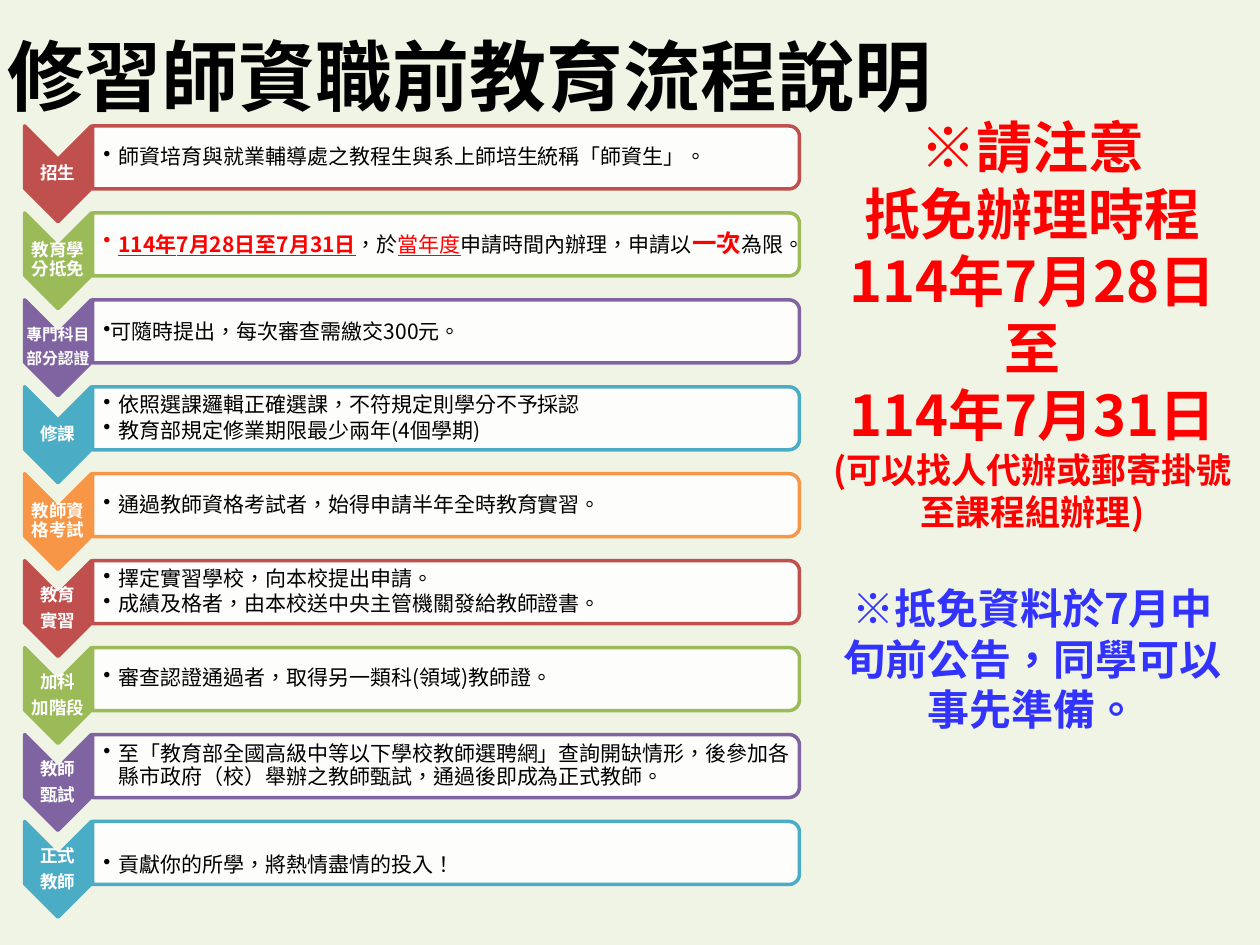
from lxml.etree import SubElement
from pptx import Presentation
from pptx.dml.color import RGBColor
from pptx.enum.lang import MSO_LANGUAGE_ID as Language
from pptx.enum.shapes import MSO_SHAPE as Shape
from pptx.enum.text import MSO_ANCHOR as Anchor, PP_ALIGN as Align
from pptx.oxml.ns import qn
from pptx.util import Inches, Pt

COLORS = {
    "background": "EFF4E5", "black": "000000", "white": "FFFFFF",
    "alert": "FF0000", "note": "3333FF", "red": "C0504D", "green": "9BBB59",
    "purple": "8064A2", "teal": "4BACC6", "orange": "F79646",
}
FONT, STOP_FONT = "Noto Sans CJK SC", "Noto Sans CJK TC"

# Content: a paragraph is a string or a list of (text, format) runs
TITLE = "修習師資職前教育流程說明"
STOP = ("。", {"font": STOP_FONT})
DATE = {"color": "alert", "bold": True, "underline": True}
TERM = {"color": "alert", "underline": True}
ONCE = {"color": "alert", "bold": True, "size": 14}

# Each step: color, label lines, bullet paragraphs, format changes
STEPS = [
    ("red", ["招生"],
     [[("師資培育與就業輔導處之教程生與系上師培生統稱「師資生」", {}), STOP]], {}),
    ("green", ["教育學分抵免"],
     [[("114年7月28日至7月31日", DATE), ("，於", {}), ("當年度", TERM),
       ("申請時間內辦理，申請以", {}), ("一次", ONCE), ("為限", {}), STOP]], {}),
    ("purple", ["專門科目", "部分認證"],
     [[("可隨時提出，每次審查需繳交300元", {}), STOP]],
     {"label_size": 9, "indent": 0, "line_spacing": 1, "space_after": 0}),
    ("teal", ["修課"],
     ["依照選課邏輯正確選課，不符規定則學分不予採認",
      "教育部規定修業期限最少兩年(4個學期)"], {}),
    ("orange", ["教師資格考試"],
     ["通過教師資格考試者，始得申請半年全時教育實習。"], {}),
    ("red", ["教育", "實習"],
     [[("擇定實習學校，向本校提出申請", {}), STOP],
      "成績及格者，由本校送中央主管機關發給教師證書。"], {}),
    ("green", ["加科", "加階段"],
     [[("審查認證通過者，取得另一類科(領域)教師證", {}), STOP]], {}),
    ("purple", ["教師", "甄試"],
     ["至「教育部全國高級中等以下學校教師選聘網」查詢開缺情形，"
      "後參加各縣市政府（校）舉辦之教師甄試，通過後即成為正式教師。"], {}),
    ("teal", ["正式", "教師"], ["貢獻你的所學，將熱情盡情的投入！"], {"drop": 0.1}),
]
NOTICE = ["※請注意", "抵免辦理時程", "114年7月28日", "至", "114年7月31日",
          [("(可以找人代辦或郵寄掛號至課程組辦理)", {"size": 20})],
          [("※抵免資料於7月中旬前公告，同學可以事先準備。",
            {"size": 24, "color": "note"})]]

# Layout
FIRST_CENTER, LAST_CENTER = 1.25, 6.77
STEP_GAP = (LAST_CENTER - FIRST_CENTER) / (len(STEPS) - 1)
CHEVRON_DROP = 0.13
CHEVRON_CENTER, BAR_CENTER, BULLETS_CENTER = 0.46, 3.54, 3.52


def color(name):
    return RGBColor.from_string(COLORS[name])


def add_text(slide, box, paragraphs, size, font_color="black", bold=False,
             align=Align.LEFT, anchor=Anchor.MIDDLE, insets=None, indent=None,
             line_spacing=1, space_after=0):
    """Add a text box; an indent in inches makes the paragraphs bulleted."""
    frame = slide.shapes.add_textbox(*map(Inches, box)).text_frame
    frame.word_wrap = True
    frame.vertical_anchor = anchor
    if insets:
        (frame.margin_left, frame.margin_top,
         frame.margin_right, frame.margin_bottom) = map(Inches, insets)
    for index, content in enumerate(paragraphs):
        paragraph = frame.add_paragraph() if index else frame.paragraphs[0]
        paragraph.alignment = align
        paragraph.line_spacing = line_spacing
        paragraph.space_after = Pt(space_after)
        if indent is not None:
            properties = paragraph._p.get_or_add_pPr()
            properties.set("marL", str(Inches(indent)))
            properties.set("indent", str(-Inches(indent)))
            SubElement(properties, qn("a:buChar"), char="•")
        runs = [(content, {})] if isinstance(content, str) else content
        for text, style in runs:
            run = paragraph.add_run()
            run.text = text
            font = run.font
            font.name = style.get("font", FONT)
            font.size = Pt(style.get("size", size))
            font.bold = style.get("bold", bold)
            font.underline = style.get("underline", False)
            font.color.rgb = color(style.get("color", font_color))
            font.language_id = Language.TRADITIONAL_CHINESE
            SubElement(run._r.get_or_add_rPr(), qn("a:ea"), typeface=font.name)
    return frame


def centered(x, y, width, height):
    return x - width / 2, y - height / 2, width, height


def add_turned_shape(slide, kind, box, fill, line, opacity=None):
    shape = slide.shapes.add_shape(kind, *map(Inches, box))
    shape.rotation = 90
    shape.shadow.inherit = False
    shape.fill.solid()
    shape.fill.fore_color.rgb = color(fill)
    shape.line.color.rgb = color(line)
    shape.line.width = Pt(2)
    if opacity:
        fill_color = shape._element.spPr.find(qn("a:solidFill"))[0]
        SubElement(fill_color, qn("a:alpha"), val=str(opacity * 1000))


def add_step(slide, center, step_color, label, bullets, changes):
    label_center = center + CHEVRON_DROP
    add_turned_shape(slide, Shape.CHEVRON,
                     centered(CHEVRON_CENTER, label_center, 0.76, 0.53),
                     step_color, step_color)
    add_text(slide, centered(CHEVRON_CENTER, label_center, 0.53, 0.23), label,
             changes.get("label_size", 10), font_color="white", bold=True,
             align=Align.CENTER, insets=[0.01] * 4, line_spacing=0.9,
             space_after=4)
    add_turned_shape(slide, Shape.ROUND_2_SAME_RECTANGLE,
                     centered(BAR_CENTER, center, 0.5, 5.61),
                     "white", step_color, opacity=90)
    bullets_center = center + changes.get("drop", 0)
    add_text(slide, centered(BULLETS_CENTER, bullets_center, 5.58, 0.45),
             bullets, 12, insets=[0.09, 0.01, 0.01, 0.01],
             indent=changes.get("indent", 0.12),
             line_spacing=changes.get("line_spacing", 0.9),
             space_after=changes.get("space_after", 1.8))


def main():
    presentation = Presentation()
    presentation.slide_width, presentation.slide_height = Inches(10), Inches(7.5)
    slide = presentation.slides.add_slide(presentation.slide_layouts[6])
    slide.background.fill.solid()
    slide.background.fill.fore_color.rgb = color("background")

    # Title
    add_text(slide, (-0.04, -0.03, 9, 1.25), [TITLE], 44, bold=True)

    # Process steps
    for index, step in enumerate(STEPS):
        add_step(slide, FIRST_CENTER + index * STEP_GAP, *step)

    # Notice, with a gap above the closing remark
    notice = add_text(slide, (6.5, 0.84, 3.39, 6.02), NOTICE, 32,
                      font_color="alert", bold=True, align=Align.CENTER,
                      anchor=Anchor.TOP)
    notice.paragraphs[-1].space_before = Pt(29)

    presentation.save("out.pptx")


if __name__ == "__main__":
    main()
